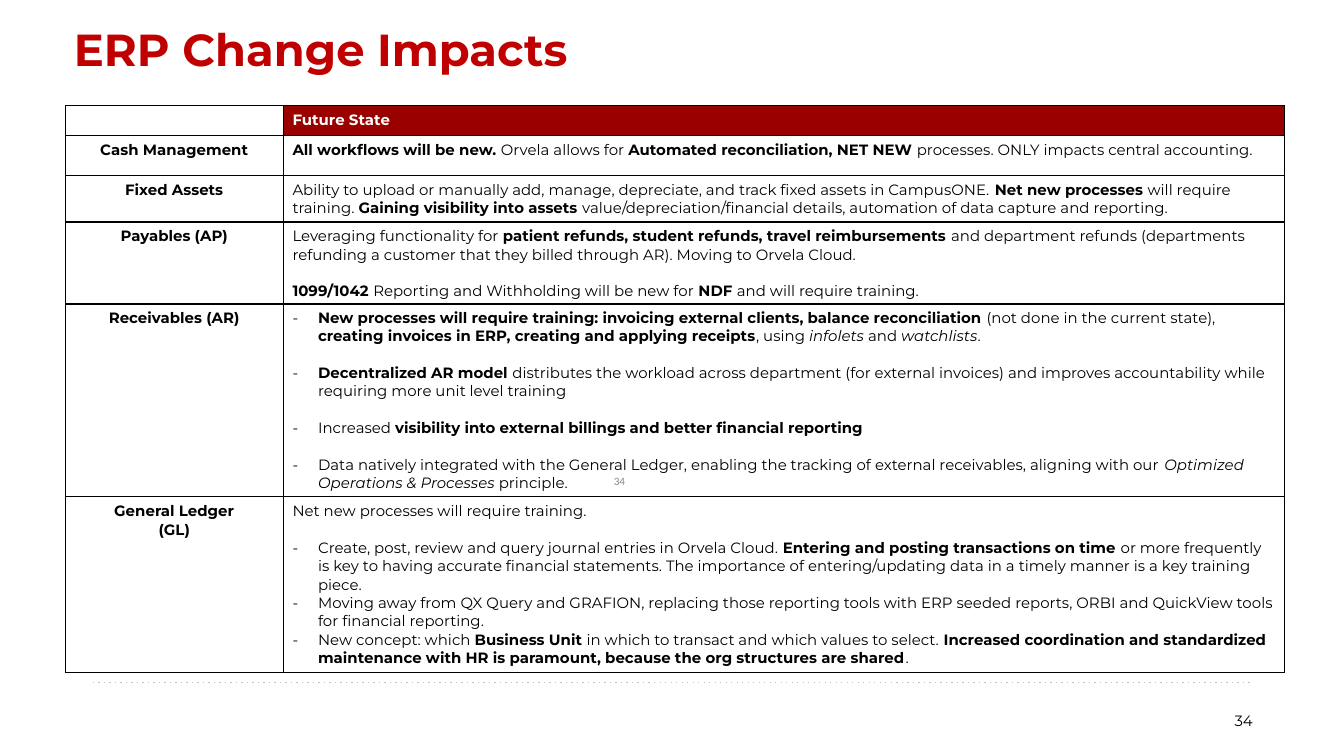
from dataclasses import dataclass
from itertools import groupby

from lxml.etree import SubElement
from pptx import Presentation
from pptx.dml.color import RGBColor
from pptx.enum.shapes import MSO_CONNECTOR
from pptx.enum.text import MSO_ANCHOR, PP_ALIGN
from pptx.oxml.ns import qn
from pptx.slide import Slide
from pptx.table import _Cell
from pptx.text.text import _Paragraph
from pptx.util import Inches, Pt


@dataclass(frozen=True)
class Theme:
    font: str = "Montserrat"
    small_font: str = "Calibri"
    title: str = "C00000"
    header: str = "990000"
    text: str = "000000"
    inverse: str = "FFFFFF"
    muted: str = "888888"
    rule: str = "C0C0C0"
    title_size: float = 24
    body_size: float = 8
    small_size: float = 6
    blank_line: float = 9.8
    border: float = 0.75


@dataclass(frozen=True)
class Area:
    """A place on a grid of 100 columns by 100 rows."""
    column: float
    row: float
    columns: float
    rows: float


@dataclass(frozen=True)
class Line:
    """Text in which * switches bold and _ switches italic."""
    text: str
    bullet: bool = False
    gap: bool = False


@dataclass(frozen=True)
class Entry:
    rows: float
    label: list[Line]
    impact: list[Line]
    header: bool = False


THEME = Theme()
WIDTH = Inches(10)
HEIGHT = WIDTH * 9 // 16
TABLE_LEFT = 4.87
TABLE_COLUMNS = (16.2, 74.5)

UPPER = [
    Entry(3.9, [Line("")], [Line("*Future State*")], header=True),
    Entry(5.33, [Line("*Cash Management*")], [
        Line("*All workflows will be new. *Orvela allows for *Automated reconciliation, NET NEW *"
             "processes. ONLY impacts central accounting.")]),
    Entry(5.87, [Line("*Fixed Assets*")], [
        Line("Ability to upload or manually add, manage, depreciate, and track fixed assets in "
             "CampusONE. *Net new processes *will require training. *Gaining visibility into assets "
             "*value/depreciation/financial details, automation of data capture and reporting.")]),
    Entry(10.13, [Line("*Payables (AP)*")], [
        Line("Leveraging functionality for *patient refunds, student refunds, travel reimbursements "
             "*and department refunds (departments refunding a customer that they billed through "
             "AR). Moving to Orvela Cloud."),
        Line("*1099/1042 *Reporting and Withholding will be new for *NDF *and will require "
             "training.", gap=True)]),
]
LOWER = [
    Entry(25.6, [Line("*Receivables (AR)*")], [
        Line("*New processes will require training: invoicing external clients, balance "
             "reconciliation* (not done in the current state), *creating invoices in ERP, creating "
             "and applying receipts*, using _infolets_ and _watchlists_.", bullet=True),
        Line("*Decentralized AR model *distributes the workload across department (for external "
             "invoices) and improves accountability while requiring more unit level training",
             bullet=True, gap=True),
        Line("Increased *visibility into external billings and better financial reporting*",
             bullet=True, gap=True),
        Line("Data natively integrated with the General Ledger, enabling the tracking of external "
             "receivables, aligning with our _Optimized Operations & Processes _principle.",
             bullet=True, gap=True)]),
    Entry(23.2, [Line("*General Ledger*"), Line("*(GL)*")], [
        Line("Net new processes will require training."),
        Line("Create, post, review and query journal entries in Orvela Cloud. *Entering and posting "
             "transactions on time *or more frequently is key to having accurate financial "
             "statements. The importance of entering/updating data in a timely manner is a key "
             "training piece.", bullet=True, gap=True),
        Line("Moving away from QX Query and GRAFION, replacing those reporting tools with ERP seeded "
             "reports, ORBI and QuickView tools for financial reporting.", bullet=True),
        Line("New concept: which *Business Unit *in which to transact and which values to select. "
             "*Increased coordination and standardized maintenance with HR is paramount, because "
             "the org structures are shared*.", bullet=True)]),
]


def across(columns: float) -> int:
    return round(WIDTH * columns / 100)


def down(rows: float) -> int:
    return round(HEIGHT * rows / 100)


def write(paragraph: _Paragraph, text: str, *, size: float = THEME.body_size,
          color: str = THEME.text, font: str = THEME.font,
          align: PP_ALIGN = PP_ALIGN.LEFT) -> None:
    """Fill a paragraph with runs, following the * and _ switches."""
    paragraph.alignment = align
    bold = italic = False
    for mark, letters in groupby(text, key=lambda letter: letter if letter in "*_" else ""):
        if mark:
            bold, italic = bold ^ (mark == "*"), italic ^ (mark == "_")
            continue
        run = paragraph.add_run()
        run.text = "".join(letters)
        run.font.size, run.font.name = Pt(size), font
        run.font.bold, run.font.italic = bold, italic
        run.font.color.rgb = RGBColor.from_string(color)
    if not text:
        SubElement(paragraph._p, qn("a:endParaRPr"), sz=str(int(size * 100)))


def add_label(slide: Slide, area: Area, text: str, *, anchor: MSO_ANCHOR = MSO_ANCHOR.MIDDLE,
              margins: tuple[float, float] = (0.1, 0.05), **text_format) -> None:
    box = slide.shapes.add_textbox(across(area.column), down(area.row),
                                   across(area.columns), down(area.rows))
    frame = box.text_frame
    frame.word_wrap = True
    frame.vertical_anchor = anchor
    frame.margin_left = frame.margin_right = Inches(margins[0])
    frame.margin_top = frame.margin_bottom = Inches(margins[1])
    write(frame.paragraphs[0], text, **text_format)


def add_borders(cell: _Cell) -> None:
    properties = cell._tc.get_or_add_tcPr()
    for side in ("lnL", "lnR", "lnT", "lnB"):
        border = SubElement(properties, qn(f"a:{side}"), w=str(Pt(THEME.border)))
        fill = SubElement(border, qn("a:solidFill"))
        SubElement(fill, qn("a:srgbClr"), val=THEME.text)


def add_dash_bullet(paragraph: _Paragraph) -> None:
    properties = paragraph._p.get_or_add_pPr()
    properties.set("marL", str(Inches(0.19)))
    properties.set("indent", str(-Inches(0.19)))
    SubElement(properties, qn("a:buFont"), typeface=THEME.font)
    SubElement(properties, qn("a:buChar"), char="-")


def fill_cell(cell: _Cell, lines: list[Line], align: PP_ALIGN, header: bool) -> None:
    add_borders(cell)
    if header:
        cell.fill.solid()
        cell.fill.fore_color.rgb = RGBColor.from_string(THEME.header)
    else:
        cell.fill.background()
    cell.margin_left = cell.margin_right = Inches(0.07)
    cell.margin_top = cell.margin_bottom = Inches(0.04)
    frame = cell.text_frame
    for index, line in enumerate(lines):
        paragraph = frame.add_paragraph() if index else frame.paragraphs[0]
        if line.bullet:
            add_dash_bullet(paragraph)
        if line.gap:
            paragraph.space_before = Pt(THEME.blank_line)
        write(paragraph, line.text, align=align, color=THEME.inverse if header else THEME.text)


def add_impacts(slide: Slide, top: float, entries: list[Entry]) -> None:
    frame = slide.shapes.add_table(len(entries), 2, across(TABLE_LEFT), down(top),
                                   across(sum(TABLE_COLUMNS)),
                                   down(sum(entry.rows for entry in entries)))
    table = frame.table
    table.first_row = table.horz_banding = False
    for column, share in zip(table.columns, TABLE_COLUMNS):
        column.width = across(share)
    for row, entry in zip(table.rows, entries):
        row.height = down(entry.rows)
        fill_cell(row.cells[0], entry.label, PP_ALIGN.CENTER, False)
        fill_cell(row.cells[1], entry.impact, PP_ALIGN.LEFT, entry.header)


def add_footer_rule(slide: Slide) -> None:
    rule = slide.shapes.add_connector(MSO_CONNECTOR.STRAIGHT, across(6.9), down(90.3),
                                      across(93.2), down(90.3))
    rule.line.color.rgb = RGBColor.from_string(THEME.rule)
    rule.line.width = Pt(0.75)
    properties = rule._element.spPr
    SubElement(properties.find(qn("a:ln")), qn("a:prstDash"), val="dot")
    SubElement(properties, qn("a:effectLst"))


def main() -> None:
    presentation = Presentation()
    presentation.slide_width, presentation.slide_height = WIDTH, HEIGHT
    slide = presentation.slides.add_slide(presentation.slide_layouts[6])
    add_label(slide, Area(71.7, 92.7, 22.5, 5.33), "34", align=PP_ALIGN.RIGHT)
    add_footer_rule(slide)
    add_label(slide, Area(4.8, 2.13, 92.3, 4.8), "*ERP Change Impacts*", anchor=MSO_ANCHOR.TOP,
              margins=(0.07, 0.04), size=THEME.title_size, color=THEME.title)
    add_label(slide, Area(35.8, 61.87, 11.7, 3.56), "34", size=THEME.small_size,
              color=THEME.muted, font=THEME.small_font, align=PP_ALIGN.RIGHT)
    add_impacts(slide, 14, UPPER)
    add_impacts(slide, 40.13, LOWER)
    presentation.save("out.pptx")


if __name__ == "__main__":
    main()
